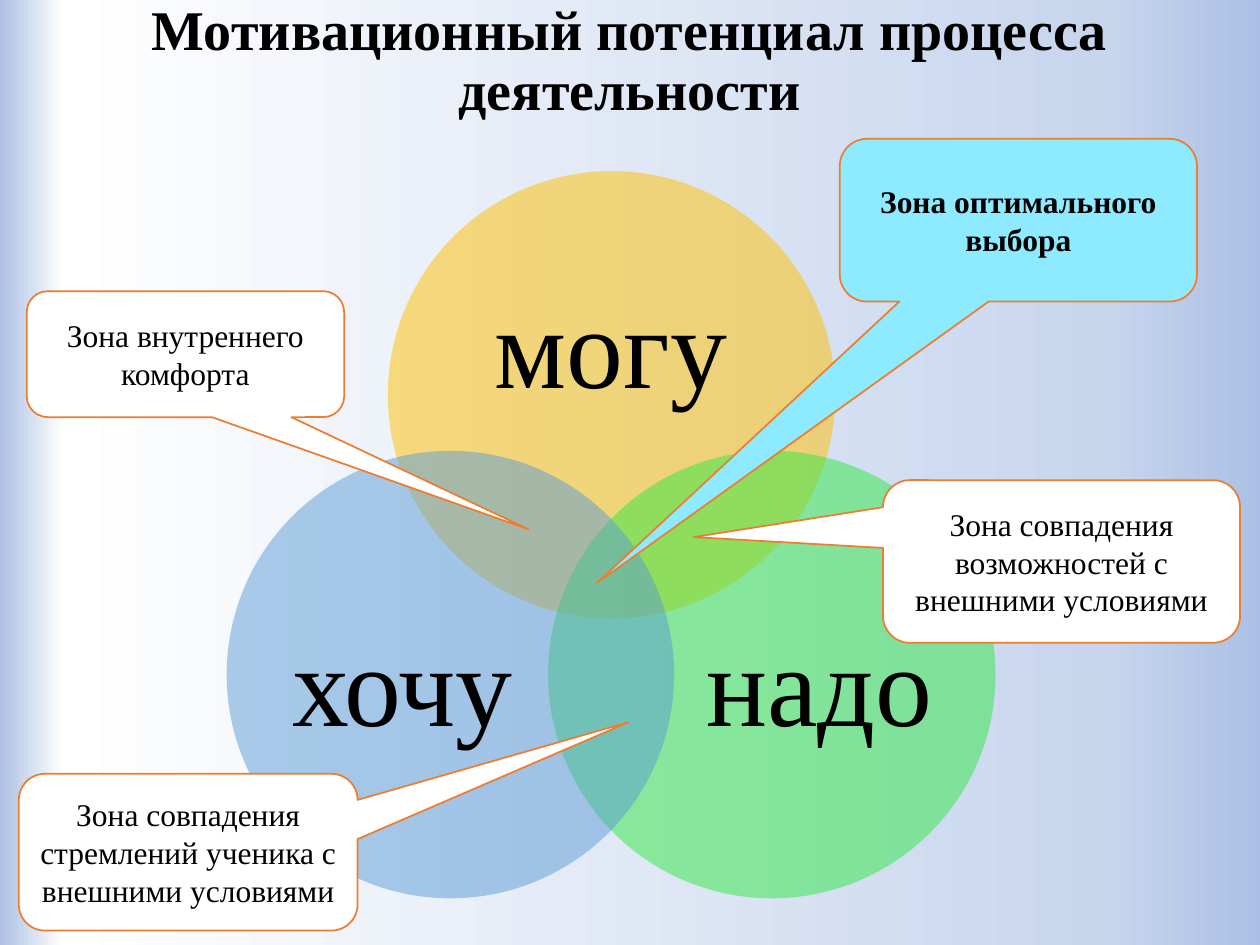
"""Build a slide with three overlapping circles and callouts naming their shared zones."""
import copy
from dataclasses import dataclass

import pptx
import pptx.dml.color
import pptx.enum.shapes
import pptx.enum.text
import pptx.oxml.ns
import pptx.util
from lxml import etree

Cm = pptx.util.Cm
Shape = pptx.enum.shapes.MSO_SHAPE
FONT = "Times New Roman"
DIAMETER = 9.02


@dataclass(frozen=True)
class Frame:
    left: float
    top: float
    width: float
    height: float

    def lengths(self) -> list[pptx.util.Cm]:
        return [Cm(value) for value in (self.left, self.top, self.width, self.height)]


@dataclass(frozen=True)
class Circle:
    label: str
    left: float
    top: float
    color: str
    label_frame: Frame


@dataclass(frozen=True)
class Callout:
    label: str
    frame: Frame
    tip: tuple[float, float]
    color: str = "FFFFFF"
    bold: bool = False


CIRCLES = [
    Circle("могу", 7.82, 3.45, "FFC000", Frame(9.02, 5.05, 6.6, 4.06)),
    Circle("надо", 11.05, 9.09, "30E845", Frame(13.82, 11.43, 5.41, 4.95)),
    Circle("хочу", 4.57, 9.09, "5B9BD5", Frame(5.41, 11.43, 5.41, 4.95)),
]
CALLOUTS = [
    Callout("Зона внутреннего комфорта", Frame(0.54, 5.87, 6.4, 2.54), (1.08, 1.39)),
    Callout("Зона совпадения возможностей с внешними условиями",
            Frame(17.8, 9.68, 7.2, 3.28), (-1.03, -0.15)),
    Callout("Зона совпадения стремлений ученика с внешними условиями",
            Frame(0.38, 15.6, 6.83, 3.16), (1.3, -0.83)),
    Callout("Зона оптимального выбора", Frame(16.93, 2.8, 7.2, 3.28),
            (-1.18, 2.23), "8EEBFF", True),
]
BACKGROUND = [(0, "ABC0E4"), (0.12, "C7D5ED"), (0.95, "FFFFFF"), (1, "ABC0E4")]


def rgb(value: str) -> pptx.dml.color.RGBColor:
    return pptx.dml.color.RGBColor.from_string(value)


def write(box, text: str, size: int, bold: bool = False, spacing: float = 1.0) -> None:
    frame = box.text_frame
    frame.word_wrap = True
    frame.vertical_anchor = pptx.enum.text.MSO_ANCHOR.MIDDLE
    para = frame.paragraphs[0]
    para.text = text
    para.alignment = pptx.enum.text.PP_ALIGN.CENTER
    para.line_spacing = spacing
    para.font.name = FONT
    para.font.size = pptx.util.Pt(size)
    para.font.bold = bold
    para.font.color.rgb = rgb("000000")


def paint_background(page) -> None:
    fill = page.background.fill
    fill.gradient()
    fill.gradient_angle = 180
    stops = page.element.find(".//" + pptx.oxml.ns.qn("a:gsLst"))
    while len(stops) < len(BACKGROUND):
        stops.append(copy.deepcopy(stops[0]))
    for stop, (position, color) in zip(fill.gradient_stops, BACKGROUND):
        stop.position = position
        stop.color.rgb = rgb(color)


def draw_circle(shapes, circle: Circle) -> None:
    disc = shapes.add_shape(
        Shape.OVAL, *Frame(circle.left, circle.top, DIAMETER, DIAMETER).lengths())
    disc.shadow.inherit = False
    disc.fill.solid()
    disc.fill.fore_color.rgb = rgb(circle.color)
    disc.line.fill.background()
    color = disc.element.spPr.find(".//" + pptx.oxml.ns.qn("a:srgbClr"))
    etree.SubElement(color, pptx.oxml.ns.qn("a:alpha"), val="50000")

    box = shapes.add_textbox(*circle.label_frame.lengths())
    frame = box.text_frame
    frame.margin_left = frame.margin_right = frame.margin_top = frame.margin_bottom = 0
    write(box, circle.label, 65, spacing=0.9)


def draw_callout(shapes, callout: Callout) -> None:
    bubble = shapes.add_shape(Shape.ROUNDED_RECTANGULAR_CALLOUT, *callout.frame.lengths())
    bubble.shadow.inherit = False
    bubble.adjustments[0], bubble.adjustments[1] = callout.tip
    bubble.fill.solid()
    bubble.fill.fore_color.rgb = rgb(callout.color)
    bubble.line.color.rgb = rgb("ED7D31")
    bubble.line.width = pptx.util.Pt(1)
    write(bubble, callout.label, 18, callout.bold)


def main() -> None:
    deck = pptx.Presentation()
    deck.slide_width, deck.slide_height = Cm(25.4), Cm(19.05)
    page = deck.slides.add_slide(deck.slide_layouts[6])
    paint_background(page)
    title = page.shapes.add_textbox(*Frame(0.48, 0.36, 24.43, 1.8).lengths())
    write(title, "Мотивационный потенциал процесса деятельности", 32, True, 0.9)
    diagram = page.shapes.add_group_shape()
    for circle in CIRCLES:
        draw_circle(diagram.shapes, circle)
    for callout in CALLOUTS:
        draw_callout(page.shapes, callout)
    deck.save("out.pptx")


if __name__ == "__main__":
    main()
